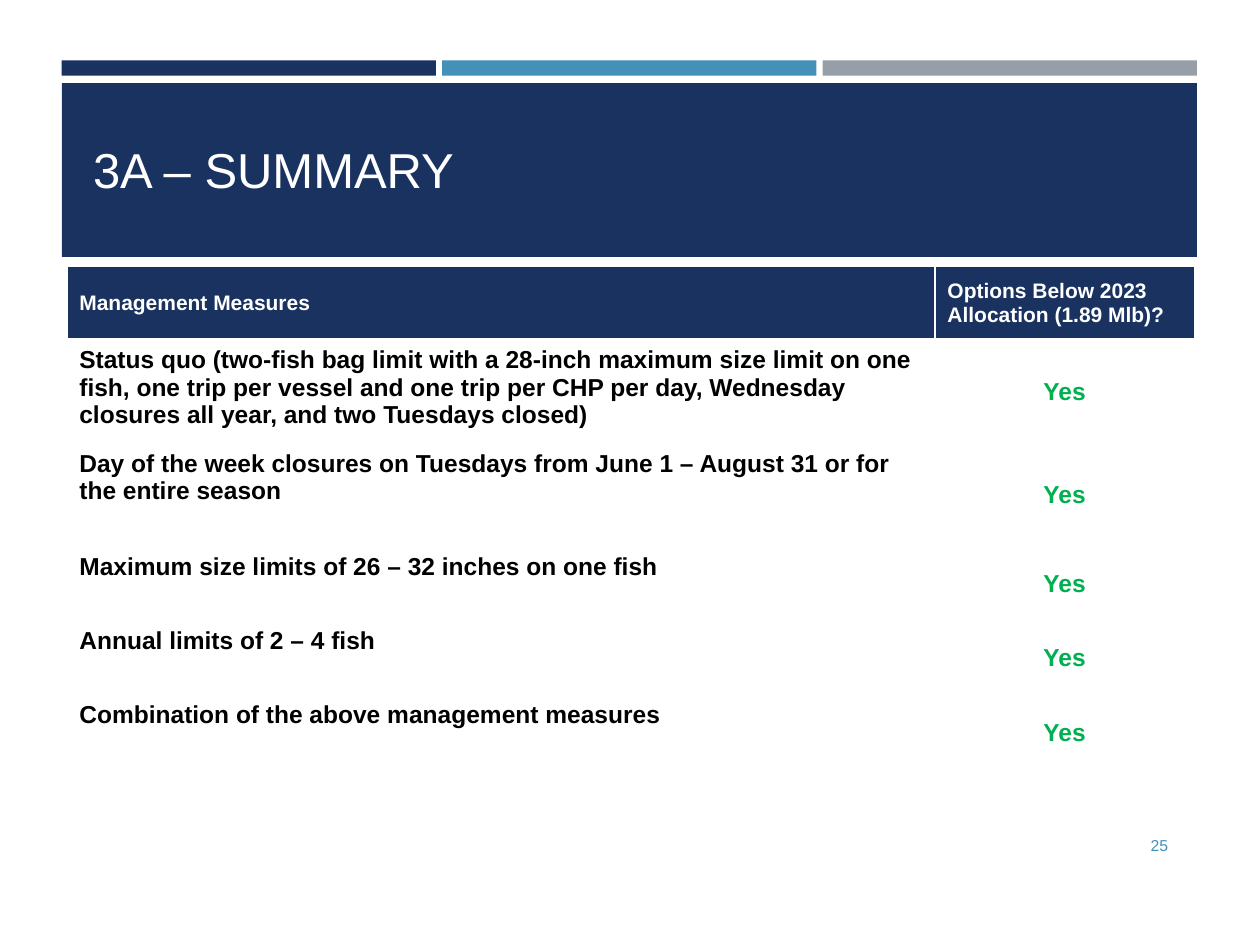
import pptx
import pptx.dml.color
import pptx.enum.shapes
import pptx.enum.text
import pptx.oxml.ns
import pptx.util
from lxml import etree

Inches = pptx.util.Inches
Pt = pptx.util.Pt
RGBColor = pptx.dml.color.RGBColor
Align = pptx.enum.text.PP_ALIGN
Anchor = pptx.enum.text.MSO_ANCHOR
qn = pptx.oxml.ns.qn

NAVY = RGBColor(0x1A, 0x32, 0x60)
BLUE = RGBColor(0x45, 0x90, 0xB8)
GREY = RGBColor(0x96, 0x9F, 0xA7)
GREEN = RGBColor(0x00, 0xB0, 0x50)
WHITE = RGBColor(0xFF, 0xFF, 0xFF)
BLACK = RGBColor(0x00, 0x00, 0x00)

HEADINGS = ("Management Measures", "Options Below 2023 Allocation (1.89 Mlb)?")
MEASURES = (
    "Status quo (two-fish bag limit with a 28-inch maximum size limit on one "
    "fish, one trip per vessel and one trip per CHP per day, Wednesday "
    "closures all year, and two Tuesdays closed)",
    "Day of the week closures on Tuesdays from June 1 – August 31 or for the entire season",
    "Maximum size limits of 26 – 32 inches on one fish",
    "Annual limits of 2 – 4 fish",
    "Combination of the above management measures",
)
COLUMN_WIDTHS = (6.89, 2.06)
ROW_HEIGHTS = (0.59, 0.82, 0.82, 0.59, 0.59, 0.59)


def add_block(page, left, top, width, height, color):
    block = page.shapes.add_shape(
        pptx.enum.shapes.MSO_SHAPE.RECTANGLE,
        Inches(left), Inches(top), Inches(width), Inches(height))
    block.shadow.inherit = False
    block.fill.solid()
    block.fill.fore_color.rgb = color
    block.line.fill.background()


def write(frame, text, size, color, bold=False, align=Align.LEFT):
    """Fill a text frame with one paragraph in one format."""
    frame.text = text
    para = frame.paragraphs[0]
    para.alignment = align
    font = para.runs[0].font
    font.name = "Arial"
    font.size = Pt(size)
    font.bold = bold
    font.color.rgb = color


def add_text(page, left, top, width, height, text, size, color, align=Align.LEFT):
    box = page.shapes.add_textbox(
        Inches(left), Inches(top), Inches(width), Inches(height))
    frame = box.text_frame
    frame.word_wrap = True
    frame.vertical_anchor = Anchor.MIDDLE
    write(frame, text, size, color, align=align)


def set_borders(cell, bottom):
    """Draw white borders, 1 pt but for the bottom one."""
    properties = cell._tc.get_or_add_tcPr()
    for side, width in (("L", 1), ("R", 1), ("T", 1), ("B", bottom)):
        line = etree.SubElement(properties, qn(f"a:ln{side}"), w=str(Pt(width)))
        fill = etree.SubElement(line, qn("a:solidFill"))
        etree.SubElement(fill, qn("a:srgbClr"), val=str(WHITE))


def fill_cell(cell, text, size, color, align=Align.LEFT, anchor=Anchor.MIDDLE,
              fill=None, bottom=1):
    set_borders(cell, bottom)
    if fill is None:
        cell.fill.background()
    else:
        cell.fill.solid()
        cell.fill.fore_color.rgb = fill
    cell.vertical_anchor = anchor
    write(cell.text_frame, text, size, color, bold=True, align=align)


def add_measures_table(page):
    table = page.shapes.add_table(
        len(ROW_HEIGHTS), len(COLUMN_WIDTHS), Inches(0.53), Inches(2.11),
        Inches(sum(COLUMN_WIDTHS)), Inches(sum(ROW_HEIGHTS))).table
    table.horz_banding = False
    for column, width in zip(table.columns, COLUMN_WIDTHS):
        column.width = Inches(width)
    for row, height in zip(table.rows, ROW_HEIGHTS):
        row.height = Inches(height)

    for index, heading in enumerate(HEADINGS):
        fill_cell(table.cell(0, index), heading, 12, WHITE, fill=NAVY, bottom=3)
    for index, measure in enumerate(MEASURES, start=1):
        fill_cell(table.cell(index, 0), measure, 14, BLACK, anchor=Anchor.TOP)
        fill_cell(table.cell(index, 1), "Yes", 14, GREEN, align=Align.CENTER)


def main():
    deck = pptx.Presentation()
    deck.slide_width = Inches(10)
    deck.slide_height = Inches(7.5)
    page = deck.slides.add_slide(deck.slide_layouts[6])

    for index, color in enumerate((NAVY, BLUE, GREY)):
        add_block(page, 0.49 + index * 3.02, 0.48, 2.97, 0.12, color)
    add_block(page, 0.49, 0.66, 9.01, 1.38, NAVY)
    add_text(page, 0.64, 0.75, 8.74, 1.18, "3A – SUMMARY", 28, WHITE)
    add_text(page, 8.53, 6.51, 0.84, 0.4, "25", 9, BLUE, Align.RIGHT)
    add_measures_table(page)

    deck.save("out.pptx")


if __name__ == "__main__":
    main()
